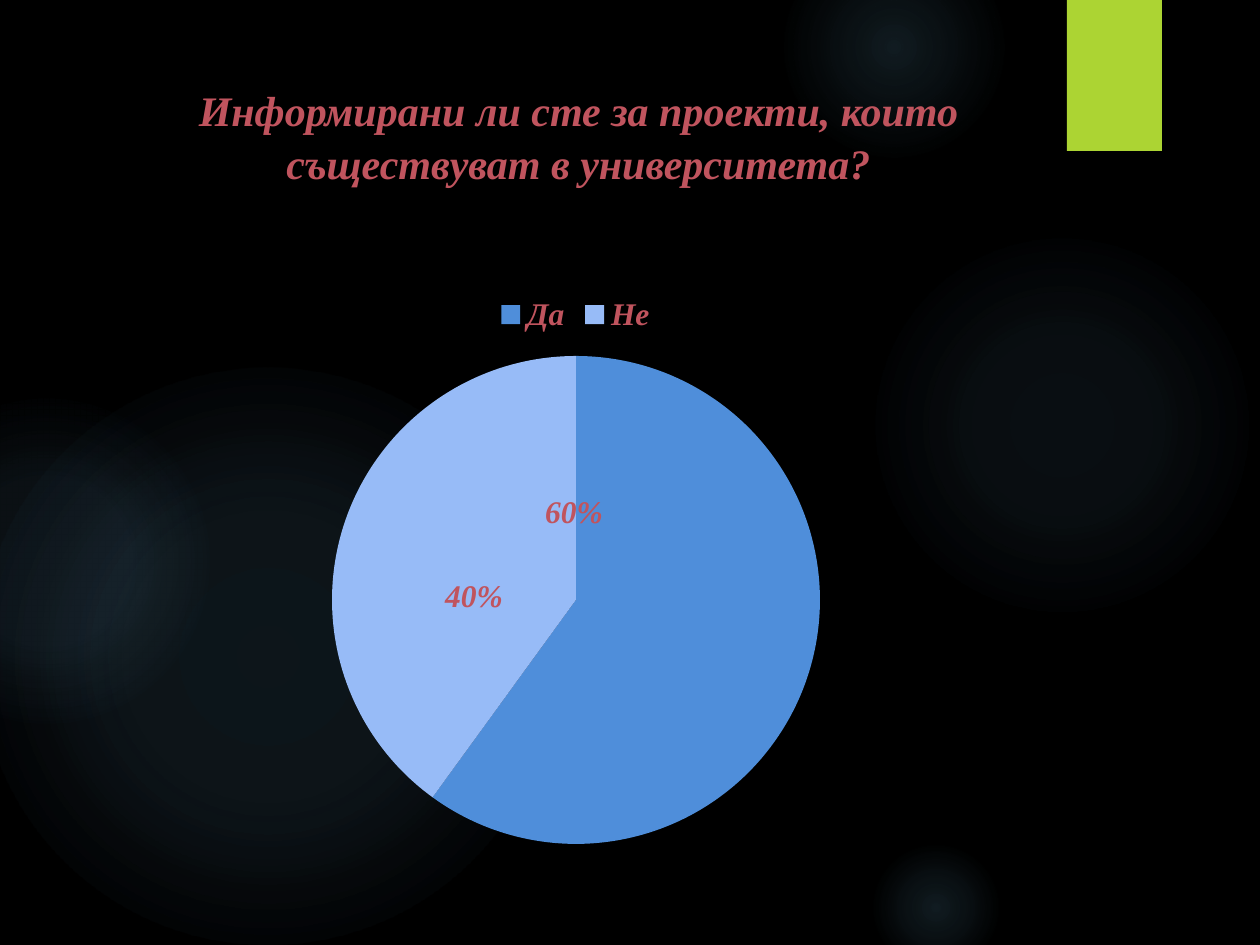
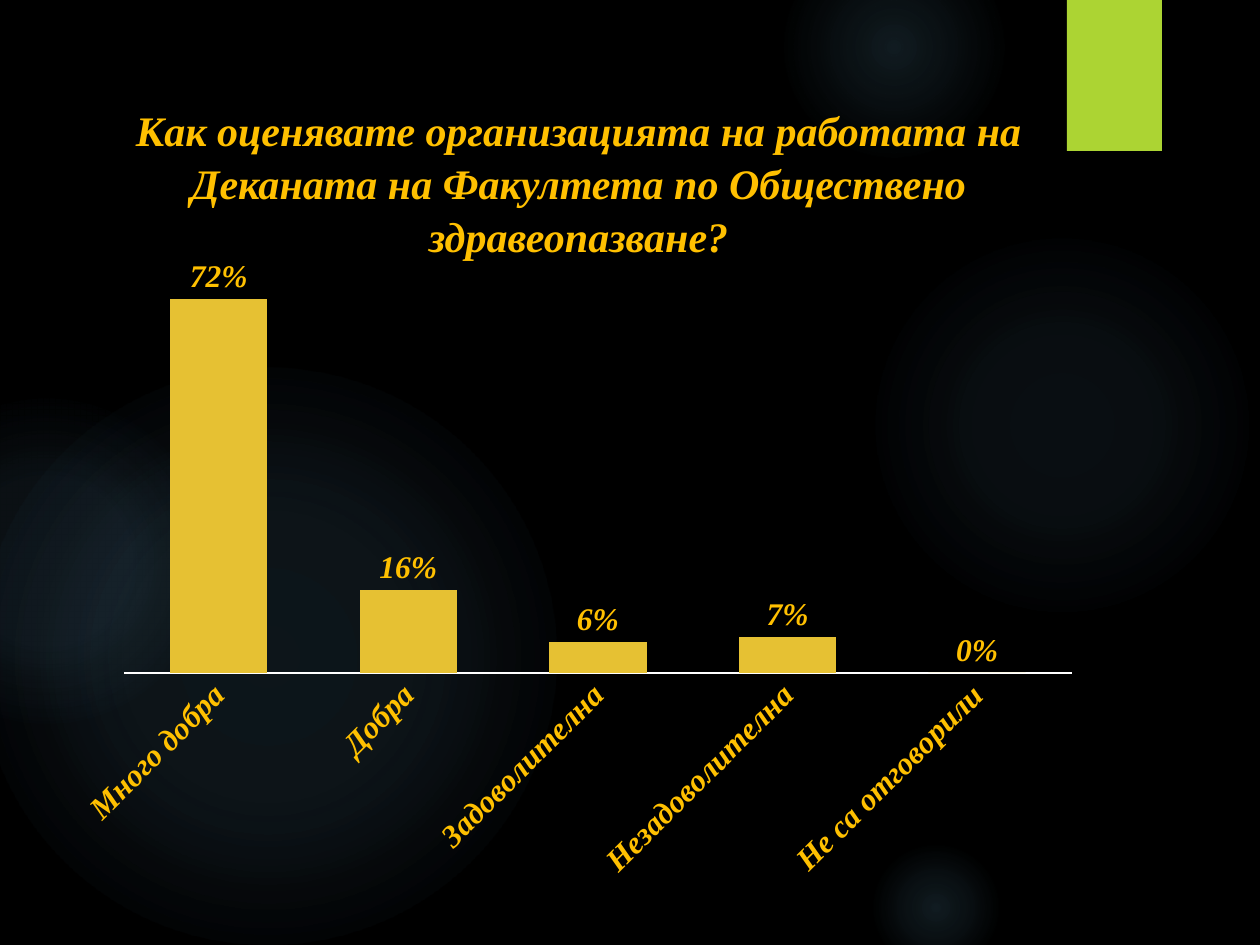
from dataclasses import dataclass

from lxml import etree
from pptx import Presentation
from pptx import util as u
from pptx.chart.data import CategoryChartData
from pptx.dml.color import RGBColor
from pptx.enum import chart as charts, shapes, text
from pptx.oxml import parse_xml
from pptx.oxml.ns import nsdecls, qn

EMU_PER_PX = 914400 / 126
SLIDE_SIZE = (1260, 945)
GLOWS = [
    ((868, 231, 388), ((0, 7), (36, 6), (69, 0))),
    ((784, -63, 220), ((0, 14), (36, 7), (73, 0))),
    ((868, 840, 136), ((0, 14), (36, 7), (66, 0))),
    ((-21, 368, 577), ((0, 11), (36, 10), (75, 0))),
    ((-116, 399, 325), ((0, 8), (36, 8), (72, 0))),
]


@dataclass(frozen=True)
class Theme:
    night: str = "000000"
    glow: str = "7AC4F0"
    ribbon: str = "ACD433"
    axis: str = "FFFFFF"
    rose: str = "C0545E"
    amber: str = "FFC000"
    gold: str = "E6C133"
    yes: str = "4F8EDA"
    no: str = "97BBF7"
    heading_font: str = "Times New Roman"
    chart_font: str = "League Spartan"
    heading_size: int = 24
    label_size: int = 18


def px(length):
    return u.Emu(round(length * EMU_PER_PX))


def paint(fill, color):
    fill.solid()
    fill.fore_color.rgb = RGBColor.from_string(color)


def style_font(font, color, name, size, bold=True, italic=True):
    font.name, font.size, font.bold, font.italic = name, u.Pt(size), bold, italic
    font.color.rgb = RGBColor.from_string(color)


def write(frame, words, align=text.PP_ALIGN.CENTER, spacing=1.05, **font):
    paragraph = frame.paragraphs[0]
    paragraph.alignment, paragraph.line_spacing = align, spacing
    run = paragraph.add_run()
    run.text = words
    style_font(run.font, **font)


def manual_layout(**parts):
    entries = "".join(f'<c:{key} val="{value}"/>' for key, value in parts.items())
    return parse_xml(f'<c:layout {nsdecls("c")}><c:manualLayout>{entries}'
                     '</c:manualLayout></c:layout>')


class Deck:
    def __init__(self, theme):
        self.theme = theme
        self.show = Presentation()
        self.show.slide_width, self.show.slide_height = map(px, SLIDE_SIZE)
        self.layout = self.show.slide_layouts[5]
        paint(self.layout.background.fill, theme.night)
        self.slide = None

    def add_slide(self):
        self.slide = self.show.slides.add_slide(self.layout)

    def shape(self, kind, box):
        drawn = self.slide.shapes.add_shape(kind, *map(px, box))
        drawn.shadow.inherit = False
        drawn.line.fill.background()
        return drawn

    def glow(self, box, stops):
        halo = self.shape(shapes.MSO_SHAPE.OVAL, box)
        colors = "".join(
            f'<a:gs pos="{at * 1000}"><a:srgbClr val="{self.theme.glow}">'
            f'<a:alpha val="{alpha * 1000}"/></a:srgbClr></a:gs>' for at, alpha in stops)
        gradient = parse_xml(
            f'<a:gradFill {nsdecls("a")}><a:gsLst>{colors}</a:gsLst><a:path path="circle">'
            '<a:fillToRect l="50000" t="50000" r="50000" b="50000"/></a:path></a:gradFill>')
        halo.element.spPr.find(qn("a:prstGeom")).addnext(gradient)
        return halo

    def share_backdrop(self):
        backdrop = [self.glow((left, top, side, side), stops)
                    for (left, top, side), stops in GLOWS]
        ribbon = self.shape(shapes.MSO_SHAPE.RECTANGLE, (1067, 0, 95, 151))
        paint(ribbon.fill, self.theme.ribbon)
        for part in backdrop + [ribbon]:
            self.layout.shapes.element.append(part.element)

    def title(self, words, color, top, height):
        heading = self.slide.shapes.title
        heading.left, heading.top, heading.width, heading.height = map(
            px, (64, top, 1029, height))
        frame = heading.text_frame
        frame.word_wrap = True
        frame.auto_size = text.MSO_AUTO_SIZE.NONE
        frame.vertical_anchor = text.MSO_ANCHOR.TOP
        write(frame, words, color=color, name=self.theme.heading_font,
              size=self.theme.heading_size)

    def label_font(self, font, color):
        style_font(font, color, self.theme.heading_font, self.theme.label_size)

    def chart(self, kind, answers, number_format, box, plot_box):
        data = CategoryChartData(number_format=number_format)
        data.categories = list(answers)
        data.add_series("Series 1", list(answers.values()))
        chart = self.slide.shapes.add_chart(kind, *map(px, box), data).chart
        style_font(chart.font, self.theme.axis, self.theme.chart_font,
                   self.theme.label_size, bold=False, italic=False)
        chart.has_title = chart.has_legend = False
        left, top, width, height = box
        x, y, w, h = plot_box
        area = chart.element.find(".//" + qn("c:plotArea"))
        for old in area.findall(qn("c:layout")):
            area.remove(old)
        area.insert(0, manual_layout(
            layoutTarget="inner", xMode="edge", yMode="edge",
            x=(x - left) / width, y=(y - top) / height, w=w / width, h=h / height))
        return chart

    def pie(self, answers, colors, label_shifts, color, box, plot_box):
        chart = self.chart(charts.XL_CHART_TYPE.PIE, answers, "General", box, plot_box)
        chart.has_legend = True
        chart.legend.position = charts.XL_LEGEND_POSITION.TOP
        chart.legend.include_in_layout = False
        self.label_font(chart.legend.font, color)
        slices = chart.plots[0].series[0]
        labels = slices.data_labels
        labels.show_percentage, labels.show_value = True, False
        labels.number_format, labels.number_format_is_linked = "0%", False
        self.label_font(labels.font, color)
        for index, (fill, (dx, dy)) in enumerate(zip(colors, label_shifts)):
            point = slices.points[index]
            paint(point.format.fill, fill)
            self.label_font(point.data_label.font, color)
            point.data_label.position = charts.XL_LABEL_POSITION.CENTER
            label = labels._element.findall(qn("c:dLbl"))[index]
            label.find(qn("c:showVal")).set("val", "0")
            label.find(qn("c:showPercent")).set("val", "1")
            label.find(qn("c:idx")).addnext(manual_layout(x=dx / box[2], y=dy / box[3]))

    def columns(self, answers, fill, color, box, plot_box):
        chart = self.chart(charts.XL_CHART_TYPE.COLUMN_CLUSTERED, answers, "0%", box, plot_box)
        plot = chart.plots[0]
        plot.gap_width, plot.vary_by_categories = 95, False
        paint(plot.series[0].format.fill, fill)
        plot.has_data_labels = True
        labels = plot.data_labels
        labels.show_value = True
        labels.number_format, labels.number_format_is_linked = "0%", False
        labels.position = charts.XL_LABEL_POSITION.OUTSIDE_END
        self.label_font(labels.font, color)
        shares = chart.value_axis
        shares.minimum_scale, shares.maximum_scale = 0, 0.8
        shares.has_major_gridlines = shares.visible = False
        ratings = chart.category_axis
        ratings.major_tick_mark = charts.XL_TICK_MARK.NONE
        paint(ratings.format.line.fill, self.theme.axis)
        ratings.format.line.width = u.Pt(0.75)
        self.label_font(ratings.tick_labels.font, color)
        slant = ratings._element.find(qn("c:txPr")).find(qn("a:bodyPr"))
        slant.set("rot", "-2700000")
        slant.set("vert", "horz")


def main():
    theme = Theme()
    deck = Deck(theme)

    deck.add_slide()
    deck.share_backdrop()
    deck.title("Информирани ли сте за проекти, които съществуват в университета?",
               theme.rose, top=76, height=107)
    deck.pie({"Да": 60, "Не": 40}, (theme.yes, theme.no), ((-118, -125), (14, 35)),
             theme.rose, box=(113, 282, 925, 578), plot_box=(332, 356, 488, 488))

    deck.add_slide()
    deck.title("Как оценявате организацията на работата на Деканата на Факултета "
               "по Обществено здравеопазване?", theme.amber, top=96, height=118)
    ratings = {"Много добра": 0.72, "Добра": 0.16, "Задоволителна": 0.06,
               "Незадоволителна": 0.07, "Не са отговорили": 0}
    deck.columns(ratings, theme.gold, theme.amber,
                 box=(63, 244, 1029, 648), plot_box=(124, 258, 948, 415))

    deck.show.save("out.pptx")


if __name__ == "__main__":
    main()
